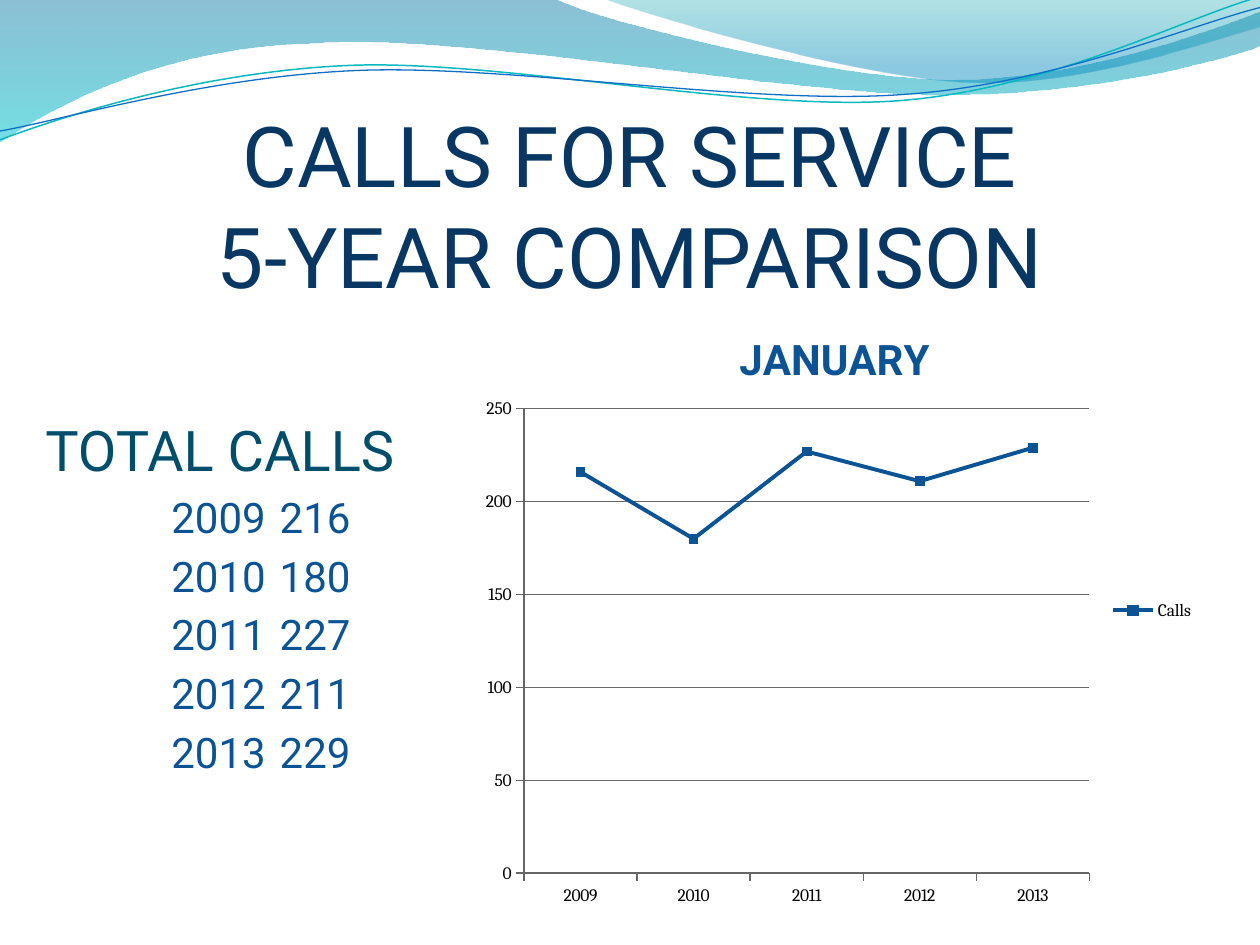
from lxml import etree
from pptx import Presentation
from pptx.chart.data import CategoryChartData
from pptx.dml.color import RGBColor
from pptx.enum.chart import XL_CHART_TYPE, XL_LEGEND_POSITION, XL_MARKER_STYLE, XL_TICK_MARK
from pptx.enum.text import MSO_ANCHOR, MSO_AUTO_SIZE, PP_ALIGN
from pptx.oxml.ns import qn
from pptx.util import Inches, Pt

LINE_MARKERS = XL_CHART_TYPE.LINE_MARKERS
LEGEND_RIGHT = XL_LEGEND_POSITION.RIGHT
SQUARE = XL_MARKER_STYLE.SQUARE
TICK_OUTSIDE = XL_TICK_MARK.OUTSIDE
BOTTOM = MSO_ANCHOR.BOTTOM
TOP = MSO_ANCHOR.TOP
NO_AUTOFIT = MSO_AUTO_SIZE.NONE
CENTER = PP_ALIGN.CENTER

# Content
TITLE = "CALLS FOR SERVICE\v5-YEAR COMPARISON"
LIST_HEADING = "TOTAL CALLS"
CHART_TITLE = "JANUARY "
SERIES_NAME = "Calls"
CALLS = {"2009": 216, "2010": 180, "2011": 227, "2012": 211, "2013": 229}

COLORS = {"title": "083763", "heading": "004E6C", "blue": "0B5394",
          "black": "000000", "axis": "666666"}
TEXT_FONT, CHART_FONT = "Roboto", "Cambria"
# Plot area as fractions of the chart
PLOT_AREA = {"x": 0.07, "y": 0.17, "w": 0.77, "h": 0.76}

# Waves: a start point, then line ends (2 numbers) or Bézier curves (6 numbers), in inches
# Gradient stops: position, colour, opacity in percent
WAVE_BANDS = [
    ([(0, 0), (4.4, -0.01), (4.76, 0.17, 6.64, 0.63, 7.58, 0.63),
      (8.53, 0.63, 9.58, 0.26, 10, 0.09), (10.01, 0.36),
      (9.83, 0.44, 8.7, 0.76, 7.46, 0.75), (6.22, 0.75, 3.82, 0.28, 2.57, 0.34),
      (1.29, 0.36, 0.46, 0.83, -0.01, 1.13)],
     [(0, "0074A1", 45), (1, "00C6CF", 55)]),
    ([(4.79, -0.01), (5.09, 0.11, 6.82, 0.62, 7.69, 0.65),
      (8.56, 0.69, 9.61, 0.32, 10, 0.21), (10, 0)],
     [(0, "00A1A9", 30), (0.8, "008BBF", 45)]),
]
WAVE_LINES = [
    ([(0, 1.11), (0.48, 0.93, 1.58, 0.57, 2.77, 0.52), (3.95, 0.47, 5.93, 0.89, 7.13, 0.8),
      (8.33, 0.71, 9.38, 0.15, 9.98, -0.02)], "0AB8BF", 0.85),
    ([(0, 1.04), (0.47, 0.96, 1.64, 0.61, 2.83, 0.56), (4.03, 0.51, 5.97, 0.84, 7.17, 0.75),
      (8.36, 0.67, 9.41, 0.21, 10, 0.06)], "0F6FC6", 0.75),
]


def rgb(color):
    return RGBColor.from_string(color)


def set_font(font, name, size, color, bold=None):
    font.name, font.size, font.bold = name, Pt(size), bold
    font.color.rgb = rgb(color)


def place(shape, left, top, width, height):
    shape.left, shape.top = Inches(left), Inches(top)
    shape.width, shape.height = Inches(width), Inches(height)


def add_wave(slide, segments, close):
    """Build the outline through the end points, then bend its curved segments."""
    ends = [(Inches(segment[-2]), Inches(segment[-1])) for segment in segments]
    builder = slide.shapes.build_freeform(*ends[0])
    builder.add_line_segments(ends[1:], close=close)
    shape = builder.convert_to_shape()
    shape.shadow.inherit = False
    lines = list(shape._element.spPr.iter(qn("a:lnTo")))
    for line, segment in zip(lines, segments[1:]):
        if len(segment) == 6:
            line.tag = qn("a:cubicBezTo")
            for index, (x, y) in enumerate((segment[:2], segment[2:4])):
                point = etree.Element(qn("a:pt"), x=str(Inches(x) - shape.left),
                                      y=str(Inches(y) - shape.top))
                line.insert(index, point)
    return shape


def add_band(slide, segments, stops):
    band = add_wave(slide, segments, True)
    band.line.fill.background()
    band.fill.gradient()
    band.fill.gradient_angle = 270
    for stop, (position, color, _) in zip(band.fill.gradient_stops, stops):
        stop.position = position
        stop.color.rgb = rgb(color)
    for element, (_, _, opacity) in zip(band._element.spPr.iter(qn("a:srgbClr")), stops):
        etree.SubElement(element, qn("a:alpha"), val=str(opacity * 1000))


def add_line(slide, segments, color, width):
    line = add_wave(slide, segments, False)
    line.fill.background()
    line.line.color.rgb = rgb(color)
    line.line.width = Pt(width)


def fill_title(title):
    place(title, 0.5, 1.17, 9, 1.25)
    frame = title.text_frame
    frame.text = TITLE
    frame.auto_size, frame.vertical_anchor = NO_AUTOFIT, BOTTOM
    frame.margin_left = frame.margin_right = frame.margin_bottom = 0
    paragraph = frame.paragraphs[0]
    paragraph.alignment = CENTER
    set_font(paragraph.font, TEXT_FONT, 48, COLORS["title"])


def fill_list(body):
    place(body, -0.17, 3.25, 3.92, 4.07)
    frame = body.text_frame
    frame.auto_size, frame.vertical_anchor = NO_AUTOFIT, TOP
    rows = [f"{year}\t{calls}" for year, calls in CALLS.items()]
    frame.text = "\n".join([LIST_HEADING] + rows)
    for index, paragraph in enumerate(frame.paragraphs):
        indent, size, color = (1.43, 24, "blue") if index else (0.43, 32, "heading")
        properties = paragraph._p.get_or_add_pPr()
        properties.set("marL", str(Inches(indent)))
        properties.set("indent", "0")
        # One tab step leads from the year to its calls
        properties.set("defTabSz", str(Inches(1.41)))
        etree.SubElement(properties, qn("a:buNone"))
        set_font(paragraph.font, TEXT_FONT, size, COLORS[color])


def set_plot_area(chart):
    plot_area = chart._chartSpace.chart.plotArea
    for old_layout in plot_area.findall(qn("c:layout")):
        plot_area.remove(old_layout)
    layout = etree.Element(qn("c:layout"))
    manual = etree.SubElement(layout, qn("c:manualLayout"))
    settings = {"layoutTarget": "inner", "xMode": "edge", "yMode": "edge", **PLOT_AREA}
    for name, value in settings.items():
        etree.SubElement(manual, qn(f"c:{name}"), val=str(value))
    plot_area.insert(0, layout)


def add_calls_chart(slide):
    data = CategoryChartData()
    data.categories = list(CALLS)
    data.add_series(SERIES_NAME, list(CALLS.values()))
    chart = slide.shapes.add_chart(LINE_MARKERS, Inches(3.75), Inches(2.42),
                                   Inches(5.83), Inches(4.85), data).chart
    set_font(chart.font, CHART_FONT, 10, COLORS["black"])
    chart.has_title = True
    chart.chart_title.include_in_layout = False
    heading = chart.chart_title.text_frame
    heading.text = CHART_TITLE
    set_font(heading.paragraphs[0].runs[0].font, TEXT_FONT, 24, COLORS["blue"], True)
    chart.has_legend = True
    chart.legend.position = LEGEND_RIGHT
    chart.legend.include_in_layout = False
    set_plot_area(chart)

    value_axis = chart.value_axis
    value_axis.minimum_scale, value_axis.maximum_scale, value_axis.major_unit = 0, 250, 50
    for axis in (chart.category_axis, value_axis):
        axis.major_tick_mark = TICK_OUTSIDE
        axis.format.line.color.rgb = rgb(COLORS["axis"])
    value_axis.major_gridlines.format.line.color.rgb = rgb(COLORS["axis"])

    chart.plots[0].vary_by_categories = False
    series = chart.plots[0].series[0]
    series.smooth = False
    series.format.line.color.rgb = rgb(COLORS["blue"])
    series.format.line.width = Pt(2.25)
    marker = series.marker
    marker.style, marker.size = SQUARE, 5
    marker.format.fill.solid()
    marker.format.fill.fore_color.rgb = rgb(COLORS["blue"])
    marker.format.line.color.rgb = rgb(COLORS["blue"])


def main():
    presentation = Presentation()
    presentation.slide_width, presentation.slide_height = Inches(10), Inches(7.5)
    slide = presentation.slides.add_slide(presentation.slide_layouts[1])
    # Wave decoration
    for segments, stops in WAVE_BANDS:
        add_band(slide, segments, stops)
    for segments, color, width in WAVE_LINES:
        add_line(slide, segments, color, width)
    # Title, list and chart
    fill_title(slide.shapes.title)
    fill_list(slide.placeholders[1])
    add_calls_chart(slide)
    presentation.save("out.pptx")


if __name__ == "__main__":
    main()
